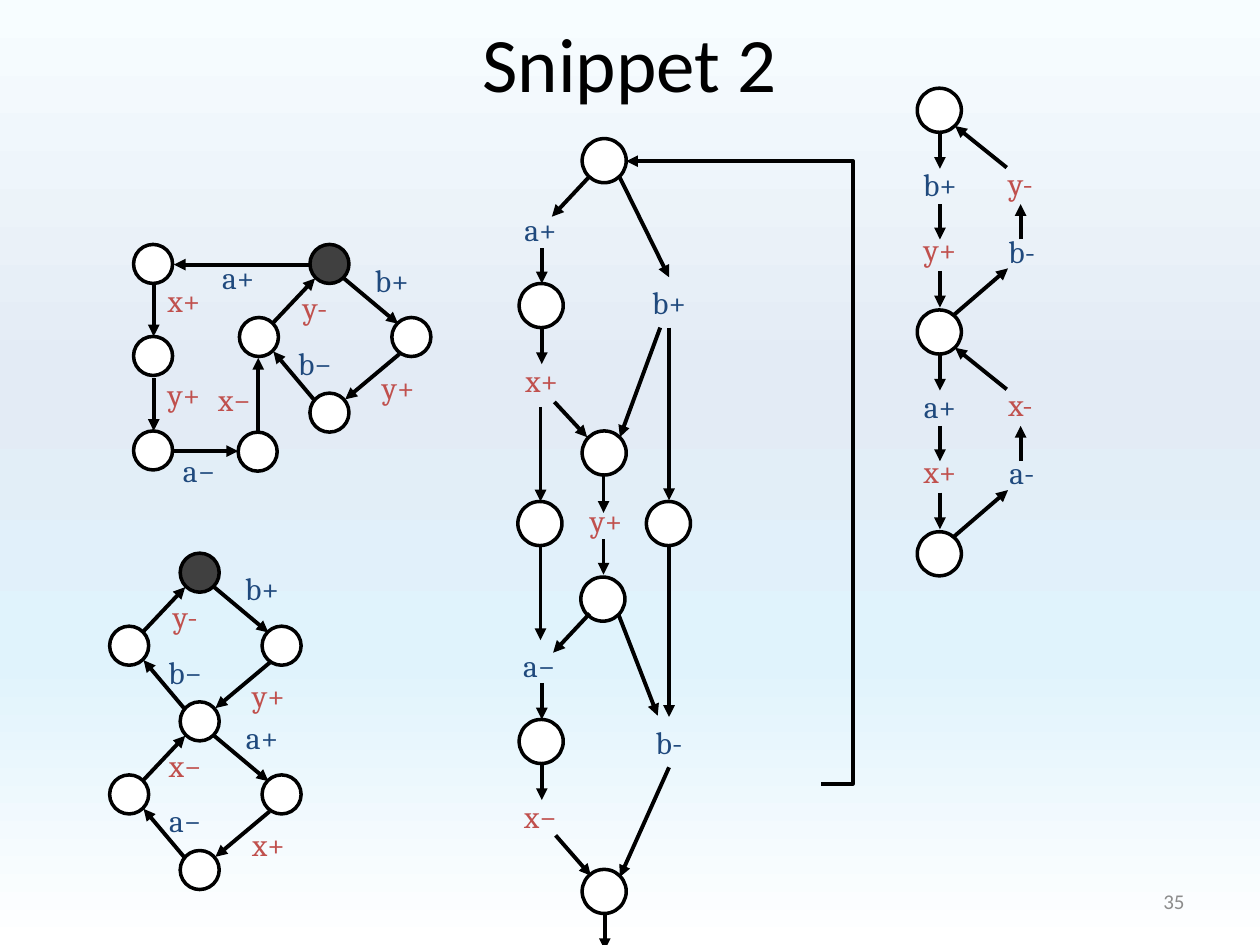
from lxml import etree
from pptx import Presentation
from pptx.dml.color import RGBColor
from pptx.enum.shapes import MSO_CONNECTOR, MSO_SHAPE
from pptx.enum.text import MSO_ANCHOR, MSO_AUTO_SIZE, PP_ALIGN
from pptx.oxml.ns import qn
from pptx.util import Inches, Pt

STRAIGHT, ELBOW = MSO_CONNECTOR.STRAIGHT, MSO_CONNECTOR.ELBOW
OVAL = MSO_SHAPE.OVAL
MIDDLE = MSO_ANCHOR.MIDDLE
CENTER, RIGHT = PP_ALIGN.CENTER, PP_ALIGN.RIGHT

BLACK, WHITE = RGBColor(0, 0, 0), RGBColor(255, 255, 255)
DARK, GRAY = RGBColor(0x40, 0x40, 0x40), RGBColor(0x8C, 0x8C, 0x8C)
BLUE, RED = RGBColor(0x1F, 0x49, 0x7D), RGBColor(0xC0, 0x50, 0x4D)
SKY = [(0, "F7FDFF"), (40, "E3EBF5"), (70, "E0F3FC"), (100, "FFFFFF")]

SMALL, LARGE = 0.31, 0.35  # state diameters
LABEL_WIDTH, LABEL_HEIGHT = 0.48, 0.4

# Diamond cycle, relative to the corner of its top state
DIAMOND_STATES = [(0.65, 0.58), (0, 1.18), (-0.56, 0.58)]
DIAMOND_ARROWS = [(0.27, 0.27, 0.7, 0.63), (0.71, 0.87, 0.28, 1.23),
                  (0.03, 1.23, -0.29, 0.85), (-0.3, 0.63, 0.04, 0.27)]
DIAMOND_LABELS = [(0.65, 0.28), (0.7, 1.13), (0.04, 0.94), (0.04, 0.5)]

# Ladder cycle, relative to the corner of its top state
LADDER_STATES = [(0, 1.76)]
LADDER_ARROWS = [(0.18, 0.36, 0.18, 0.64), (0.18, 0.92, 0.18, 1.2),
                 (0.18, 1.45, 0.18, 1.74), (0.29, 1.8, 0.72, 1.43),
                 (0.82, 1.2, 0.82, 0.92), (0.71, 0.63, 0.3, 0.3)]
LADDER_LABELS = [(0.18, 0.76), (0.18, 1.28), (0.83, 1.29), (0.82, 0.75)]

# Left branch of the upper state graph
BRANCH_STATES = [(1.06, 1.94), (1.06, 2.67), (1.06, 3.42), (1.89, 3.43)]
BRANCH_ARROWS = [(2.46, 2.1, 1.38, 2.1), (1.22, 2.25, 1.22, 2.67),
                 (1.22, 3, 1.22, 3.42), (1.38, 3.58, 1.89, 3.58),
                 (2.05, 3.43, 2.05, 2.84)]
BRANCH_LABELS = [("a+", 1.89, 2.2), ("x+", 1.46, 2.38), ("y+", 1.46, 3.13),
                 ("a−", 1.58, 3.73), ("x−", 1.86, 3.17)]

# Central net
NET_STATES = [(4.62, 1.1), (4.12, 2.25), (4.62, 3.42), (4.11, 3.98), (5.13, 3.98),
              (4.61, 4.58), (4.12, 5.71), (4.62, 6.9)]
NET_ARROWS = [
    (4.67, 1.41, 4.38, 1.72), (4.92, 1.41, 5.31, 2.2),
    (4.3, 1.97, 4.3, 2.25), (4.3, 2.6, 4.3, 2.89),
    (4.4, 3.19, 4.66, 3.47), (5.24, 2.6, 4.92, 3.47),
    (4.29, 3.23, 4.29, 3.98), (4.29, 4.33, 4.29, 5.08),
    (5.31, 2.6, 5.31, 3.97), (5.31, 4.33, 5.31, 5.69),
    (4.79, 3.78, 4.79, 4.07), (4.79, 4.28, 4.79, 4.56),
    (4.68, 4.87, 4.39, 5.18), (4.91, 4.88, 5.22, 5.68),
    (4.3, 5.42, 4.3, 5.71), (4.3, 6.06, 4.3, 6.35),
    (4.41, 6.63, 4.69, 6.95), (5.31, 6.09, 4.92, 6.96),
    (4.8, 7.26, 4.8, 7.54)]
NET_LABELS = [("a+", 4.29, 1.82), ("b+", 5.31, 2.4), ("x+", 4.3, 3.02),
              ("y+", 4.81, 4.13), ("a−", 4.28, 5.28), ("b-", 5.31, 5.89),
              ("x−", 4.29, 6.48)]
RETURN_ARROW, RETURN_BEND = (6.52, 6.22, 4.97, 1.28), -16100


def add_state(canvas, left, top, size, color=WHITE):
    state = canvas.add_shape(OVAL, *map(Inches, (left, top, size, size)))
    state.shadow.inherit = False
    state.fill.solid()
    state.fill.fore_color.rgb = color
    state.line.color.rgb = BLACK
    state.line.width = Pt(2)


def add_arrow(canvas, ends, kind=STRAIGHT):
    arrow = canvas.add_connector(kind, *map(Inches, ends))
    arrow.line.color.rgb = BLACK
    arrow.line.width = Pt(2.25)
    etree.SubElement(arrow.line._get_or_add_ln(), qn("a:tailEnd"), type="triangle")
    etree.SubElement(arrow._element.spPr, qn("a:effectLst"))
    return arrow


def write(frame, text, size, font, color, align):
    para = frame.paragraphs[0]
    para.alignment = align
    span = para.add_run()
    span.text = text
    span.font.size = Pt(size)
    span.font.name = font
    span.font.color.rgb = color


def add_label(canvas, text, x, y):
    """Put a signal label centred on x, y: a and b in blue, x and y in red."""
    box = canvas.add_textbox(Inches(x - LABEL_WIDTH / 2), Inches(y - LABEL_HEIGHT / 2),
                             Inches(LABEL_WIDTH), Inches(LABEL_HEIGHT))
    box.text_frame.word_wrap = False
    box.text_frame.auto_size = MSO_AUTO_SIZE.SHAPE_TO_FIT_TEXT
    write(box.text_frame, text, 18, "Cambria", BLUE if text[0] in "ab" else RED, CENTER)


def add_graph(canvas, states, arrows, labels, size, origin=(0, 0)):
    dx, dy = origin
    for x, y in states:
        add_state(canvas, x + dx, y + dy, size)
    for x1, y1, x2, y2 in arrows:
        add_arrow(canvas, (x1 + dx, y1 + dy, x2 + dx, y2 + dy))
    for text, x, y in labels:
        add_label(canvas, text, x + dx, y + dy)


def named(names, places):
    return [(name, x, y) for name, (x, y) in zip(names.split(), places)]


def add_diamond(canvas, names, origin):
    add_graph(canvas, DIAMOND_STATES, DIAMOND_ARROWS,
              named(names, DIAMOND_LABELS), SMALL, origin)


def add_ladder(canvas, names, origin):
    add_graph(canvas, LADDER_STATES, LADDER_ARROWS,
              named(names, LADDER_LABELS), LARGE, origin)


def paint_background(page):
    fill = page.background.fill
    fill.gradient()
    fill.gradient_angle = 270
    stops = page._element.find(".//" + qn("a:gsLst"))
    for stop in list(stops):
        stops.remove(stop)
    for percent, color in SKY:
        stop = etree.SubElement(stops, qn("a:gs"), pos=str(percent * 1000))
        etree.SubElement(stop, qn("a:srgbClr"), val=color)


def main():
    deck = Presentation()
    deck.slide_width, deck.slide_height = Inches(10), Inches(7.5)
    page = deck.slides.add_slide(deck.slide_layouts[5])
    paint_background(page)

    # Title and page number
    title = page.shapes.title
    title.left, title.top, title.width, title.height = map(Inches, (0.5, 0.06, 9, 0.86))
    title.text_frame.vertical_anchor = MIDDLE
    write(title.text_frame, "Snippet 2", 44, "Calibri", BLACK, CENTER)
    number = page.shapes.add_textbox(*map(Inches, (7.17, 6.95, 2.33, 0.4)))
    number.text_frame.word_wrap = True
    number.text_frame.vertical_anchor = MIDDLE
    write(number.text_frame, "35", 12, "Calibri", GRAY, RIGHT)

    # Upper state graph: one diamond and a branch
    upper = page.shapes.add_group_shape().shapes
    add_state(upper, 2.46, 1.94, SMALL, DARK)
    add_diamond(upper, "b+ y+ b− y-", (2.46, 1.94))
    add_graph(upper, BRANCH_STATES, BRANCH_ARROWS, BRANCH_LABELS, SMALL)

    # Lower state graph: two stacked diamonds
    lower = page.shapes.add_group_shape().shapes
    add_state(lower, 1.43, 4.39, SMALL, DARK)
    add_diamond(lower, "b+ y+ b− y-", (1.43, 4.39))
    add_diamond(lower, "a+ x+ a− x−", (1.43, 5.57))

    # Central net with its return arrow
    add_graph(page.shapes, NET_STATES, NET_ARROWS, NET_LABELS, LARGE)
    back = add_arrow(page.shapes, RETURN_ARROW, ELBOW)
    bends = back._element.spPr.find(".//" + qn("a:avLst"))
    etree.SubElement(bends, qn("a:gd"), name="adj1", fmla=f"val {RETURN_BEND}")

    # Right ladder: two stacked cycles
    ladder = page.shapes.add_group_shape().shapes
    add_state(ladder, 7.28, 0.7, LARGE)
    add_ladder(ladder, "b+ y+ b- y-", (7.28, 0.7))
    add_ladder(ladder, "a+ x+ a- x-", (7.28, 2.46))

    deck.save("out.pptx")


if __name__ == "__main__":
    main()
